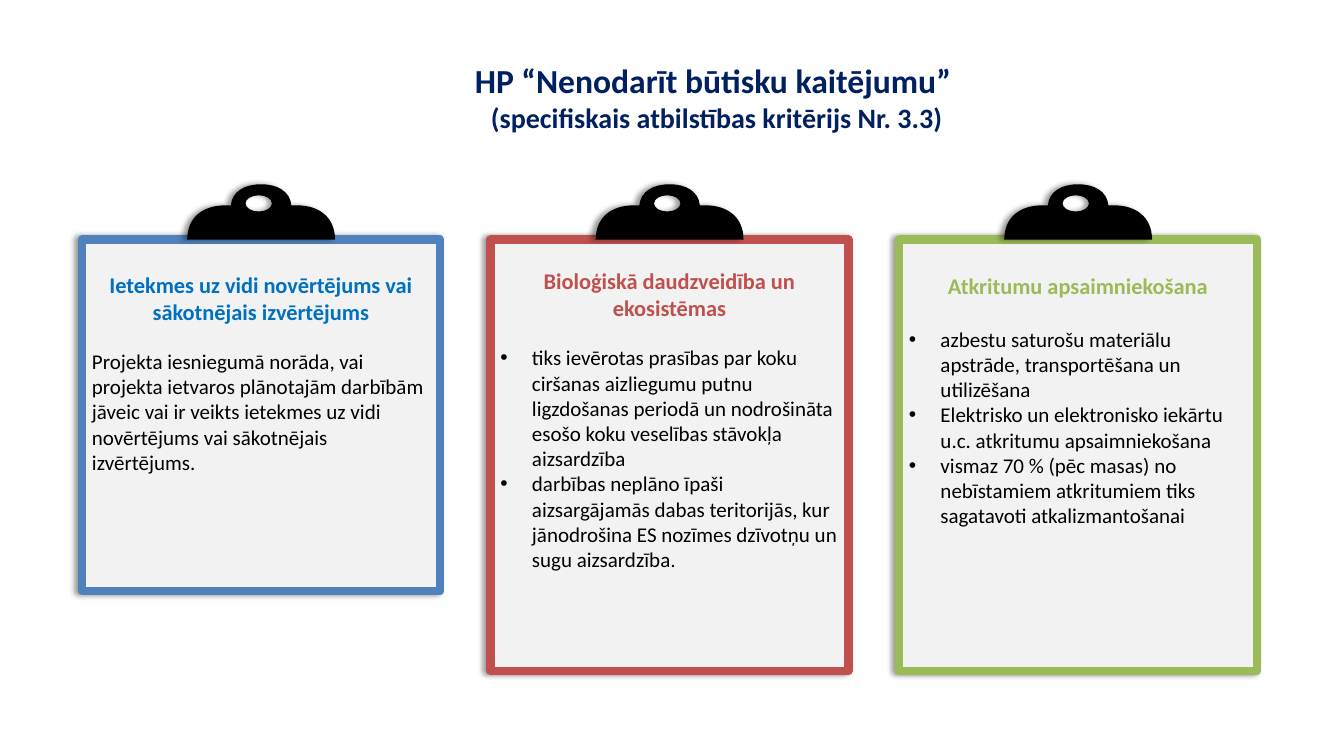
from dataclasses import dataclass
from typing import Optional

import pptx
import pptx.dml.color
import pptx.enum.shapes
import pptx.enum.text
import pptx.oxml
import pptx.oxml.ns
import pptx.util
from lxml import etree

Pt = pptx.util.Pt
RGBColor = pptx.dml.color.RGBColor
Align = pptx.enum.text.PP_ALIGN
Anchor = pptx.enum.text.MSO_ANCHOR
qn = pptx.oxml.ns.qn

FONT = "Calibri"
NAVY = RGBColor(0x00, 0x20, 0x60)
PAPER = RGBColor(0xF2, 0xF2, 0xF2)
BLACK = RGBColor(0x00, 0x00, 0x00)
BLUE = RGBColor(0x4F, 0x81, 0xBD)
BRIGHT_BLUE = RGBColor(0x00, 0x70, 0xC0)
RED = RGBColor(0xC0, 0x50, 0x4D)
GREEN = RGBColor(0x9B, 0xBB, 0x59)

# Layout in points
BOARD_LEFT, BOARD_TOP, BOARD_WIDTH, BOARD_STEP = 58.6, 171, 255.6, 291.8
CLIP_OFFSET, CLIP_TOP = 75.1, 131.6
BULLET_INDENT = 22.5

# Clip outlines from the clip's top left corner: one point is a line, three are a curve
CLIP_OUTLINES = (
    (((78.6, 15.1),),
     ((74.4, 15.1),),
     ((73.6, 5), (64.3, 0), (52.8, 0)),
     ((41.3, 0), (32, 5), (31.2, 15.1)),
     ((27, 15.1),),
     ((12, 15.1), (0, 23), (0, 39.6)),
     ((105.6, 39.6),),
     ((105.6, 23), (93.6, 15.1), (78.6, 15.1))),
    (((51.1, 19.5),),
     ((45.9, 19.5), (41.7, 16.9), (41.7, 13.7)),
     ((41.7, 10.5), (45.9, 7.9), (51.1, 7.9)),
     ((56.3, 7.9), (60.5, 10.5), (60.5, 13.7)),
     ((60.5, 16.9), (56.3, 19.5), (51.1, 19.5))),
)


@dataclass(frozen=True)
class TextArea:
    top: float
    height: float


@dataclass(frozen=True)
class Clipboard:
    heading: str
    items: tuple[str, ...]
    border: RGBColor
    heading_color: RGBColor
    height: float
    text_inset: float
    heading_gap: float
    bulleted: bool = True
    text_area: Optional[TextArea] = None  # None: text sits in the board
    small_ending: str = ""


CLIPBOARDS = (
    Clipboard(
        "Ietekmes uz vidi novērtējums vai sākotnējais izvērtējums",
        ("Projekta iesniegumā norāda, vai projekta ietvaros plānotajām darbībām jāveic "
         "vai ir veikts ietekmes uz vidi novērtējums vai sākotnējais izvērtējums.",),
        BLUE, BRIGHT_BLUE, 251.3, 3.6, 17, False, TextArea(190, 174.2)),
    Clipboard(
        "Bioloģiskā daudzveidība un ekosistēmas",
        ("tiks ievērotas prasības par koku ciršanas aizliegumu putnu ligzdošanas periodā "
         "un nodrošināta esošo koku veselības stāvokļa aizsardzība",
         "darbības neplāno īpaši aizsargājamās dabas teritorijās, kur jānodrošina "
         "ES nozīmes dzīvotņu un sugu aizsardzība"),
        RED, RED, 308.2, 20, 17, small_ending="."),
    Clipboard(
        "Atkritumu apsaimniekošana",
        ("azbestu saturošu materiālu apstrāde, transportēšana un utilizēšana",
         "Elektrisko un elektronisko iekārtu u.c. atkritumu apsaimniekošana",
         "vismaz 70 % (pēc masas) no nebīstamiem atkritumiem tiks sagatavoti atkalizmantošanai"),
        GREEN, GREEN, 308.2, 20.6, 19.5, True, TextArea(173.8, 280.8)),
)


def write_text(paragraph, text: str, *, size: float, color: RGBColor, bold: bool = False,
               align: Align = Align.LEFT, space_before: float = 0, bullet: bool = False) -> None:
    paragraph.alignment = align
    paragraph.space_before = Pt(space_before)
    if bullet:
        properties = paragraph._p.get_or_add_pPr()
        properties.set("marL", str(Pt(BULLET_INDENT)))
        properties.set("indent", str(-Pt(BULLET_INDENT)))
        etree.SubElement(properties, qn("a:buFont"), typeface="Arial")
        etree.SubElement(properties, qn("a:buChar"), char="•")
    run = paragraph.add_run()
    run.text = text
    run.font.name = FONT
    run.font.size = Pt(size)
    run.font.bold = bold
    run.font.color.rgb = color


def add_shadow(shape) -> None:
    shape.shadow.inherit = False
    effects = shape.element.spPr.find(qn("a:effectLst"))
    effects.append(pptx.oxml.parse_xml(
        f'<a:outerShdw {pptx.oxml.ns.nsdecls("a")} blurRad="{Pt(4)}" dist="{Pt(3)}" '
        'dir="10800000" algn="r" rotWithShape="0"><a:srgbClr val="000000">'
        '<a:alpha val="40000"/></a:srgbClr></a:outerShdw>'))


def bend_segments(shape) -> None:
    """Merge each three lines that stand for a curve into one Bezier segment."""
    lines = iter(list(shape.element.iter(qn("a:lnTo"))))
    for outline in CLIP_OUTLINES:
        for segment in outline[1:]:
            pieces = [next(lines) for _ in segment]
            if len(pieces) == 3:
                bend = etree.Element(qn("a:cubicBezTo"))
                pieces[0].addprevious(bend)
                for piece in pieces:
                    bend.append(piece[0])
                    piece.getparent().remove(piece)


def add_clip(slide, left: float, top: float) -> None:
    builder = None
    for outline in CLIP_OUTLINES:
        start, *points = [(Pt(left + x), Pt(top + y)) for segment in outline for x, y in segment]
        if builder is None:
            builder = slide.shapes.build_freeform(*start)
        else:
            builder.move_to(*start)
        builder.add_line_segments(points, close=True)
    shape = builder.convert_to_shape()
    bend_segments(shape)
    shape.fill.solid()
    shape.fill.fore_color.rgb = BLACK
    shape.line.fill.background()
    add_shadow(shape)


def add_clipboard(slide, clipboard: Clipboard, left: float) -> None:
    # Board and clip
    board = slide.shapes.add_shape(
        pptx.enum.shapes.MSO_SHAPE.RECTANGLE,
        Pt(left), Pt(BOARD_TOP), Pt(BOARD_WIDTH), Pt(clipboard.height))
    board.fill.solid()
    board.fill.fore_color.rgb = PAPER
    board.line.color.rgb = clipboard.border
    board.line.width = Pt(6)
    add_shadow(board)
    add_clip(slide, left + CLIP_OFFSET, CLIP_TOP)

    # Heading and items
    holder = board
    if clipboard.text_area:
        holder = slide.shapes.add_textbox(
            Pt(left), Pt(clipboard.text_area.top),
            Pt(BOARD_WIDTH), Pt(clipboard.text_area.height))
    frame = holder.text_frame
    frame.word_wrap = True
    frame.vertical_anchor = Anchor.TOP
    frame.margin_top = Pt(clipboard.text_inset)
    write_text(frame.paragraphs[0], clipboard.heading, size=16, bold=True,
               color=clipboard.heading_color, align=Align.CENTER)
    for index, item in enumerate(clipboard.items):
        paragraph = frame.add_paragraph()
        write_text(paragraph, item, size=15, color=BLACK,
                   space_before=0 if index else clipboard.heading_gap,
                   bullet=clipboard.bulleted)
    if clipboard.small_ending:
        write_text(paragraph, clipboard.small_ending, size=14, color=BLACK)


def add_title(slide) -> None:
    title = slide.shapes.title
    title.left, title.top, title.width, title.height = Pt(193), Pt(26.6), Pt(638), Pt(85)
    title.text_frame.vertical_anchor = Anchor.MIDDLE
    paragraph = title.text_frame.paragraphs[0]
    write_text(paragraph, "HP “Nenodarīt būtisku kaitējumu” ", size=24, bold=True,
               color=NAVY, align=Align.CENTER)
    paragraph.add_line_break()
    write_text(paragraph, "(specifiskais atbilstības kritērijs Nr. 3.3)", size=20, bold=True,
               color=NAVY, align=Align.CENTER)


def main() -> None:
    presentation = pptx.Presentation()
    presentation.slide_width, presentation.slide_height = Pt(960), Pt(540)
    slide = presentation.slides.add_slide(presentation.slide_layouts[5])
    add_title(slide)
    for column, clipboard in enumerate(CLIPBOARDS):
        add_clipboard(slide, clipboard, BOARD_LEFT + column * BOARD_STEP)
    presentation.save("out.pptx")


if __name__ == "__main__":
    main()
